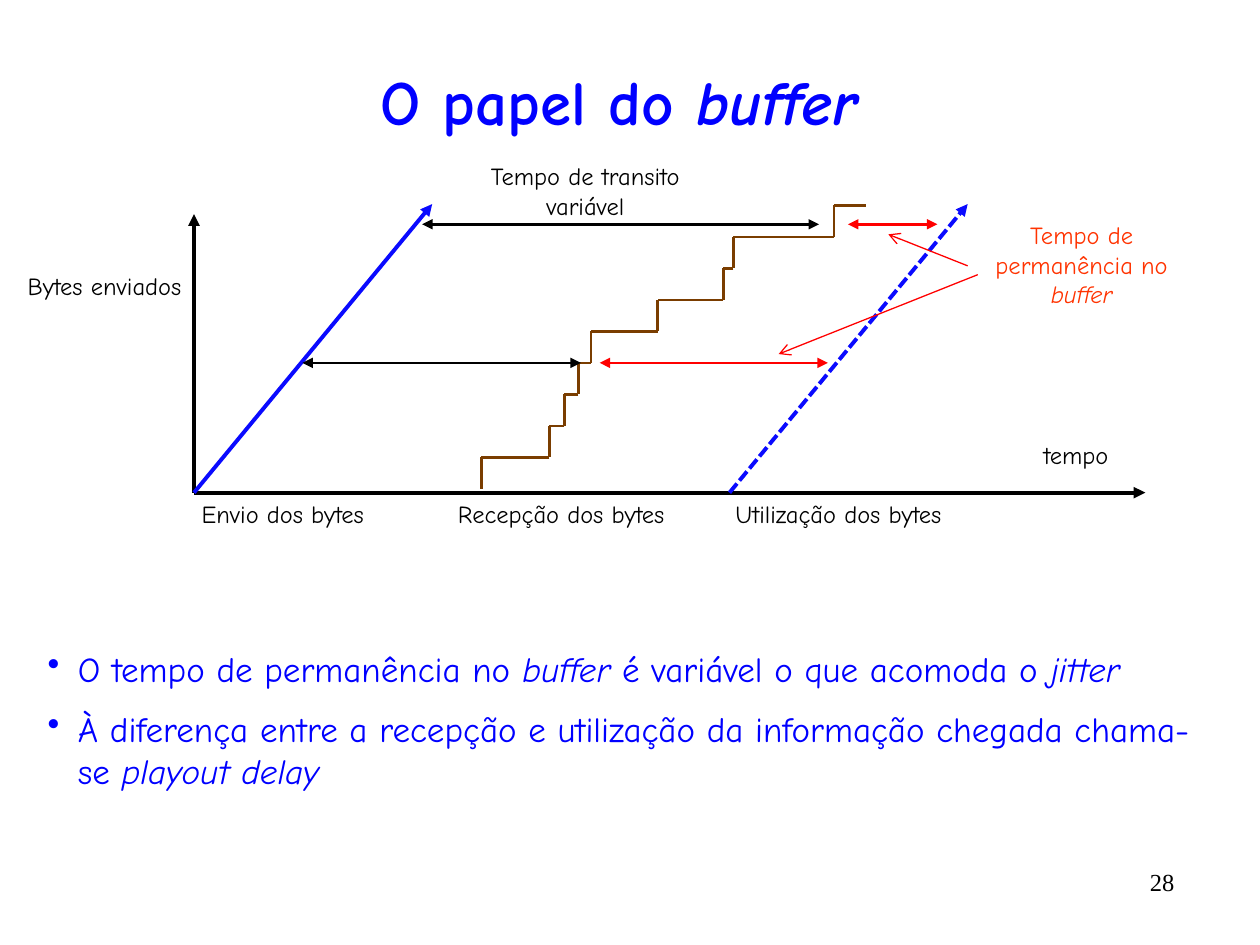
import pptx
import pptx.util
import pptx.dml.color
import pptx.enum.dml
import pptx.enum.shapes
import pptx.enum.text
import pptx.oxml
import pptx.oxml.ns

Inches, Pt = pptx.util.Inches, pptx.util.Pt
ALIGN = pptx.enum.text.PP_ALIGN
ANCHOR = pptx.enum.text.MSO_ANCHOR

COLORS = {"text": "0000FF", "black": "000000", "slope": "0A0AFF",
          "stairs": "7A3D00", "red": "FF0000", "orange": "FF3300"}
FONT = "Comic Neue"

TITLE = [("O papel do ", False), ("buffer", True)]
BULLETS = [
    [("O tempo de permanência no ", False), ("buffer", True),
     (" é variável o que acomoda o ", False), ("jitter", True)],
    [("À diferença entre a recepção e utilização da informação chegada chama-se ", False),
     ("playout delay", True)],
]
LABELS = [
    ([("tempo", False)], (7.83, 3.44, 1.42, 0.34), "black"),
    ([("Bytes enviados", False)], (0.12, 2.1, 1.42, 0.57), "black"),
    ([("Tempo de transito variável", False)], (3.74, 1.23, 1.81, 0.57), "black"),
    ([("Envio dos bytes", False)], (1.3, 3.91, 1.89, 0.34), "black"),
    ([("Recepção dos bytes", False)], (3.43, 3.91, 2.05, 0.34), "black"),
    ([("Utilização dos bytes", False)], (5.63, 3.91, 2.05, 0.34), "black"),
    ([("Tempo de permanência no ", False), ("buffer", True)],
     (7.68, 1.7, 1.81, 0.81), "orange"),
]

ORIGIN_X, AXIS_Y = 1.54, 3.91
TIME_END, BYTES_END = 9.09, 1.7
SLOPE_RUN, SLOPE_TOP = 1.89, 1.62
PLAYOUT_X = 5.79
STAIR_BASE, STAIR_RISE = 3.88, 0.25
ARRIVALS = [3.82, 4.36, 4.48, 4.59, 4.69, 5.22, 5.74, 5.82, 6.62, 6.87]
INTERVALS = [
    (2.4, 4.61, 2.88, "black"),
    (3.35, 6.5, 1.78, "black"),
    (4.76, 6.57, 2.88, "red"),
    (6.73, 7.44, 1.78, "red"),
]
POINTERS = [((7.76, 2.18), (6.18, 2.81)), ((7.68, 2.11), (7.05, 1.86))]

deck = pptx.Presentation()
deck.slide_width, deck.slide_height = Inches(10), Inches(7.5)
slide = deck.slides.add_slide(deck.slide_layouts[6])


def rgb(name):
    return pptx.dml.color.RGBColor.from_string(COLORS[name])


def add_text(paragraphs, box, size, color, align=ALIGN.CENTER, anchor=ANCHOR.TOP,
             font=FONT, bold=False):
    frame = slide.shapes.add_textbox(*map(Inches, box)).text_frame
    frame.word_wrap = True
    frame.vertical_anchor = anchor
    for index, runs in enumerate(paragraphs):
        paragraph = frame.add_paragraph() if index else frame.paragraphs[0]
        paragraph.alignment = align
        for words, italic in runs:
            run = paragraph.add_run()
            run.text = words
            run.font.name, run.font.size = font, Pt(size)
            run.font.bold, run.font.italic = bold, italic
            run.font.color.rgb = rgb(color)
    return frame


def add_line(start, end, color, width, head=None, tail=None, dash=None):
    line = slide.shapes.add_connector(
        pptx.enum.shapes.MSO_CONNECTOR.STRAIGHT, *map(Inches, (*start, *end)))
    line.line.color.rgb = rgb(color)
    line.line.width = Pt(width)
    if dash:
        line.line.dash_style = dash
    outline = line.line._get_or_add_ln()
    for tag, arrow in (("a:headEnd", head), ("a:tailEnd", tail)):
        if arrow:
            end_mark = pptx.oxml.ns.qn(tag)
            outline.append(outline.makeelement(end_mark, {"type": arrow}))
    properties = line._element.spPr
    properties.append(properties.makeelement(pptx.oxml.ns.qn("a:effectLst"), {}))


add_text([TITLE], (0.33, 0.42, 9.17, 0.75), 36, "text", anchor=ANCHOR.MIDDLE, bold=True)
add_text([[("28", False)]], (8.42, 6.83, 1, 0.42), 14, "black",
         align=ALIGN.RIGHT, font="Times New Roman")

body = add_text(BULLETS, (0.28, 5.09, 9.42, 1.65), 20, "text", align=ALIGN.LEFT)
for paragraph in body.paragraphs:
    paragraph.space_before = Pt(10)
    settings = paragraph._p.get_or_add_pPr()
    settings.set("marL", str(Inches(0.24)))
    settings.set("indent", str(-Inches(0.24)))
    settings.append(settings.makeelement(pptx.oxml.ns.qn("a:buChar"), {"char": "•"}))

origin = (ORIGIN_X, AXIS_Y)
add_line(origin, (TIME_END, AXIS_Y), "black", 2.25, tail="triangle")
add_line(origin, (ORIGIN_X, BYTES_END), "black", 2.25, tail="triangle")
for foot, dash in ((ORIGIN_X, None),
                   (PLAYOUT_X, pptx.enum.dml.MSO_LINE.SQUARE_DOT)):
    add_line((foot, AXIS_Y), (foot + SLOPE_RUN, SLOPE_TOP), "slope", 2.25,
             tail="triangle", dash=dash)

for step, (arrival, following) in enumerate(zip(ARRIVALS, ARRIVALS[1:])):
    bottom = STAIR_BASE - step * STAIR_RISE
    top = bottom - STAIR_RISE
    add_line((arrival, top), (arrival, bottom), "stairs", 1.5)
    add_line((following, top), (arrival, top), "stairs", 1.5)

for left, right, height, color in INTERVALS:
    add_line((left, height), (right, height), color, 1.5, "triangle", "triangle")
for start, end in POINTERS:
    add_line(start, end, "red", 0.75, tail="arrow")

for runs, box, color in LABELS:
    add_text([runs], box, 14, color)

deck.save("out.pptx")
